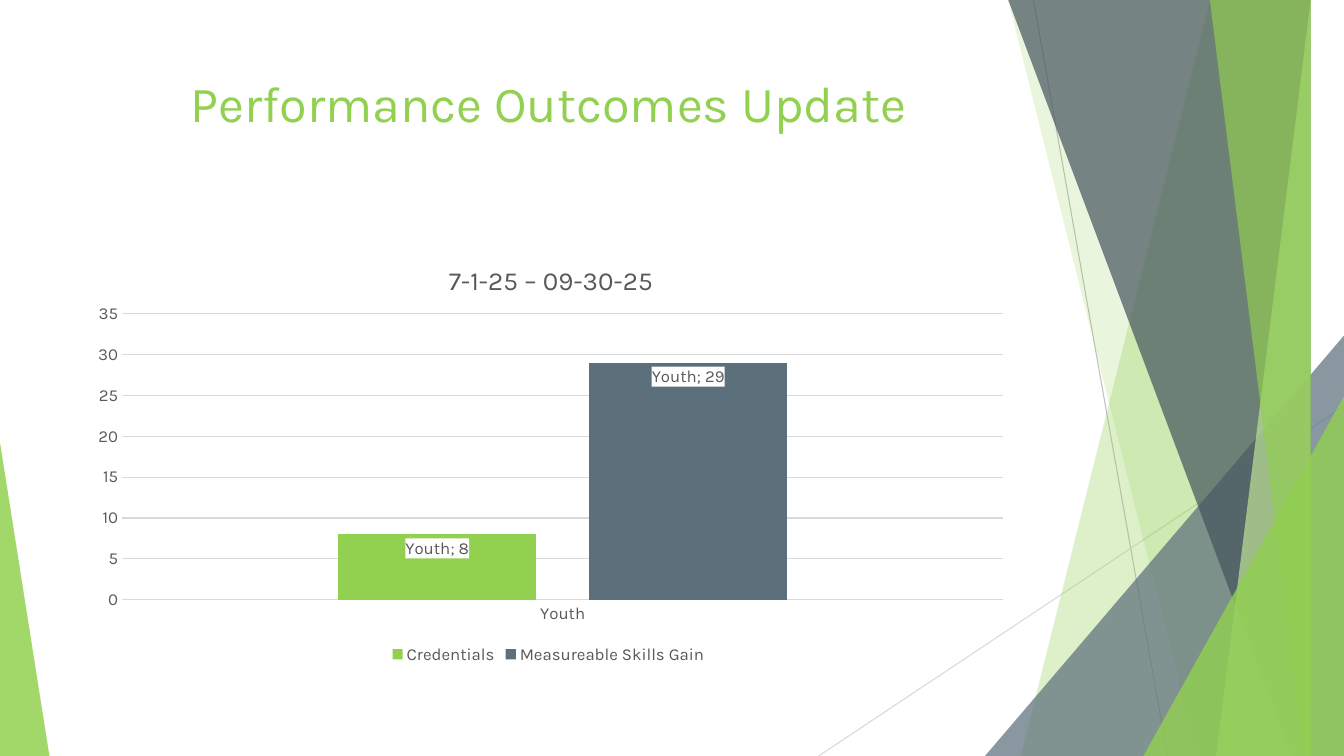
from lxml.etree import SubElement
from pptx import Presentation
from pptx.chart.data import CategoryChartData
from pptx.dml.color import RGBColor
from pptx.enum.chart import XL_CHART_TYPE as ChartType, XL_LABEL_POSITION as LabelPos
from pptx.enum.chart import XL_LEGEND_POSITION as LegendPos, XL_TICK_MARK as Tick
from pptx.enum.shapes import MSO_CONNECTOR as Connector, MSO_SHAPE as Shape
from pptx.enum.text import MSO_ANCHOR as Anchor, PP_ALIGN as Align
from pptx.oxml import parse_xml
from pptx.oxml.ns import nsdecls, qn
from pptx.util import Inches, Pt

WIDTH, HEIGHT = 13.33, 7.5
TOP = -0.01
FONT = "Karla"
COLORS = {
    "green": "92D050", "pale": "BEE396", "slate": "5C707C", "dark": "45545D",
    "text": "595959", "grid": "D9D9D9", "ray": "BFBFBF", "white": "FFFFFF",
}
TITLE = "Performance Outcomes Update"
PERIOD = "7-1-25 – 09-30-25"
GROUP = "Youth"
OUTCOMES = [("Credentials", 8, "green"), ("Measureable Skills Gain", 29, "slate")]

RAYS = [((10.25, 0), (11.58, HEIGHT), "ray"), ((WIDTH, 4.03), (8.12, HEIGHT), "grid")]
# kind, (top-left x, bottom-left x) or (left, top, width, corner), colour, opacity
FACETS = [
    ("band", (12.28, 10.04), "green", 30),
    ("band", (10.5, 11.83), "green", 20),
    ("corner", (9.77, 3.33, 3.56, 1), "slate", 72),
    ("band", (10.21, 12.91), "dark", 70),
    ("band", (13.03, 11.92), "pale", 70),
    ("band", (11.96, 13.18), "green", 65),
    ("corner", (11.34, 3.93, 1.99, 1), "green", 80),
    ("corner", (0, 4.39, 0.49, 0), "green", 85),
]
LEFT, CONTENT_WIDTH = 0.74, 9.4
TITLE_BOX = (LEFT, 0.67, CONTENT_WIDTH, 1.44)
CHART_BOX = (LEFT, 2.39, CONTENT_WIDTH, 4.24)
PERIOD_LAYOUT = {"x": 0.39, "y": 0.04}
PLOT_LAYOUT = {"x": 0.05, "y": 0.17, "w": 0.93, "h": 0.67}


def color(name):
    return RGBColor.from_string(COLORS[name])


def style(font, size, name):
    font.size, font.name, font.bold = Pt(size), FONT, False
    font.color.rgb = color(name)


def stroke(line, name):
    line.color.rgb = color(name)
    line.width = Pt(0.75)


def layout_xml(shares, inner=False):
    target = '<c:layoutTarget val="inner"/>' if inner else ""
    modes = "".join(f'<c:{k}Mode val="edge"/>' for k in shares if k in "xy")
    values = "".join(f'<c:{k} val="{v}"/>' for k, v in shares.items())
    return parse_xml(f'<c:layout {nsdecls("c")}><c:manualLayout>{target}{modes}{values}'
                     "</c:manualLayout></c:layout>")


def place_layout(parent, layout, after=None):
    old = parent.find(qn("c:layout"))
    if old is not None:
        parent.remove(old)
    parent.insert(0 if after is None else parent.index(after) + 1, layout)


def add_ray(slide, start, end, name):
    ray = slide.shapes.add_connector(Connector.STRAIGHT, *map(Inches, start + end))
    stroke(ray.line, name)
    SubElement(ray._element.spPr, qn("a:effectLst"))


def add_facet(slide, kind, geometry, name, opacity):
    if kind == "band":
        upper, lower = geometry
        outline = slide.shapes.build_freeform(upper, TOP, scale=Inches(1))
        outline.add_line_segments([(WIDTH, TOP), (WIDTH, HEIGHT), (lower, HEIGHT)])
        facet = outline.convert_to_shape()
    else:
        left, top, width, apex = geometry
        box = map(Inches, (left, top, width, HEIGHT - top))
        facet = slide.shapes.add_shape(Shape.ISOSCELES_TRIANGLE, *box)
        facet.adjustments[0] = apex
    facet.shadow.inherit = False
    facet.line.fill.background()
    facet.fill.solid()
    facet.fill.fore_color.rgb = color(name)
    tint = facet._element.spPr.find(f'{qn("a:solidFill")}/{qn("a:srgbClr")}')
    SubElement(tint, qn("a:alpha"), val=str(opacity * 1000))


def add_title(slide):
    title = slide.shapes.title
    title.left, title.top, title.width, title.height = map(Inches, TITLE_BOX)
    frame = title.text_frame
    frame.word_wrap, frame.vertical_anchor = True, Anchor.TOP
    heading = frame.paragraphs[0]
    heading.alignment = Align.CENTER
    run = heading.add_run()
    run.text = TITLE
    style(run.font, 36, "green")


def add_outcomes(slide):
    data = CategoryChartData()
    data.categories = [GROUP]
    for outcome, count, _ in OUTCOMES:
        data.add_series(outcome, [count])
    chart = slide.shapes.add_chart(ChartType.COLUMN_CLUSTERED, *map(Inches, CHART_BOX), data).chart
    style(chart.font, 12, "text")

    chart.has_title = True
    period = chart.chart_title.text_frame.paragraphs[0].add_run()
    period.text = PERIOD
    style(period.font, 18.6, "text")
    heading = chart.chart_title._element
    place_layout(heading, layout_xml(PERIOD_LAYOUT), heading.find(qn("c:tx")))

    chart.has_legend = True
    chart.legend.position = LegendPos.BOTTOM
    chart.legend.include_in_layout = False
    style(chart.legend.font, 12, "text")

    for axis in (chart.category_axis, chart.value_axis):
        axis.major_tick_mark = axis.minor_tick_mark = Tick.NONE
        style(axis.tick_labels.font, 12, "text")
    stroke(chart.category_axis.format.line, "grid")
    counts = chart.value_axis
    counts.minimum_scale, counts.maximum_scale, counts.major_unit = 0, 35, 5
    counts.format.line.fill.background()
    stroke(counts.major_gridlines.format.line, "grid")

    plot = chart.plots[0]
    plot.gap_width, plot.overlap, plot.vary_by_categories = 219, -27, False
    place_layout(plot._element.getparent(), layout_xml(PLOT_LAYOUT, inner=True))
    for series, (_, _, name) in zip(plot.series, OUTCOMES):
        series.format.fill.solid()
        series.format.fill.fore_color.rgb = color(name)
        labels = series.data_labels
        labels.show_value = labels.show_category_name = True
        labels.position = LabelPos.INSIDE_END
        style(labels.font, 12, "text")
        labels._element.find(qn("c:txPr")).addprevious(parse_xml(
            f'<c:spPr {nsdecls("c", "a")}><a:solidFill><a:srgbClr val="{COLORS["white"]}"/>'
            "</a:solidFill></c:spPr>"))


def main():
    deck = Presentation()
    deck.slide_width, deck.slide_height = Inches(WIDTH), Inches(HEIGHT)
    slide = deck.slides.add_slide(deck.slide_layouts[5])
    for ray in RAYS:
        add_ray(slide, *ray)
    for facet in FACETS:
        add_facet(slide, *facet)
    add_title(slide)
    add_outcomes(slide)
    deck.save("out.pptx")


if __name__ == "__main__":
    main()
